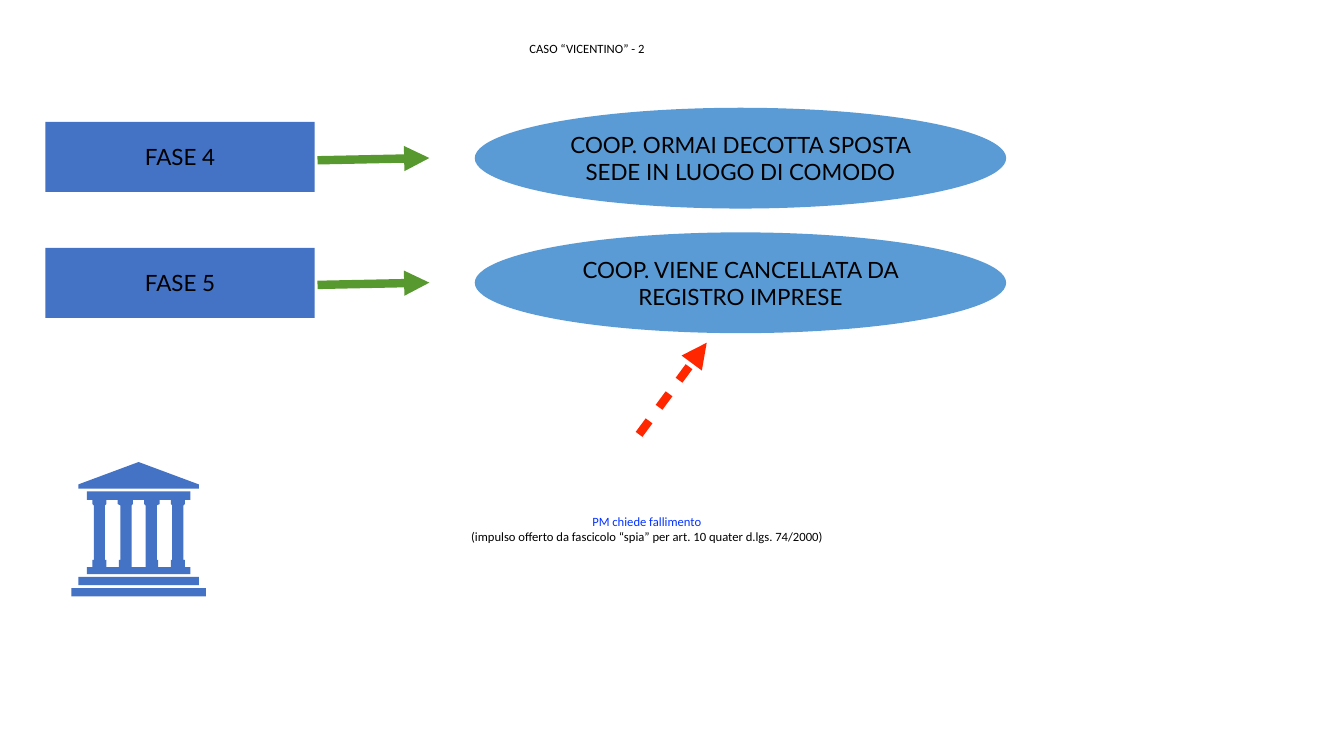
"""Build the slide on phases 4 and 5 of the case."""
import pptx
import pptx.dml.color
import pptx.enum.shapes
import pptx.enum.text
import pptx.oxml
import pptx.oxml.ns
import pptx.util

Pt = pptx.util.Pt
RGBColor = pptx.dml.color.RGBColor
MSO_SHAPE = pptx.enum.shapes.MSO_SHAPE
MSO_AUTO_SIZE = pptx.enum.text.MSO_AUTO_SIZE
PP_ALIGN = pptx.enum.text.PP_ALIGN

BLACK = RGBColor(0x00, 0x00, 0x00)
BLUE = RGBColor(0x44, 0x72, 0xC4)
SKY = RGBColor(0x5B, 0x9B, 0xD5)
GREEN = RGBColor(0x57, 0x98, 0x2F)
RED = RGBColor(0xFF, 0x26, 0x00)
LINK_BLUE = RGBColor(0x04, 0x33, 0xFF)


def write(sp, *lines, font="Calibri", size=9, colors=(BLACK,), align=PP_ALIGN.CENTER,
          wrap=True, auto_size=MSO_AUTO_SIZE.NONE):
    tf = sp.text_frame
    tf.word_wrap = wrap
    tf.auto_size = auto_size
    tf.vertical_anchor = pptx.enum.text.MSO_ANCHOR.MIDDLE
    tf.margin_left = tf.margin_right = tf.margin_top = tf.margin_bottom = Pt(2.4)
    for i, text in enumerate(lines):
        p = tf.add_paragraph() if i else tf.paragraphs[0]
        p.alignment = align
        p.line_spacing = 1.0
        r = p.add_run()
        r.text = text
        r.font.name = font
        r.font.size = Pt(size)
        r.font.color.rgb = colors[i % len(colors)]


def mirror(center, profile):
    right = [(center + dx, y) for dx, y in profile]
    left = [(center - dx, y) for dx, y in reversed(profile)]
    return right + left


class Deck:
    """Hold the slide and its shared style."""

    def __init__(self, prs):
        self.slide = prs.slides.add_slide(prs.slide_layouts[5])
        self.shapes = self.slide.shapes

    def title(self, text, x, y, w, h):
        sp = self.shapes.title
        sp.left, sp.top, sp.width, sp.height = Pt(x), Pt(y), Pt(w), Pt(h)
        write(sp, text, align=PP_ALIGN.LEFT, auto_size=MSO_AUTO_SIZE.SHAPE_TO_FIT_TEXT)

    def paint(self, sp, fill):
        sp.shadow.inherit = False
        sp.fill.solid()
        sp.fill.fore_color.rgb = fill
        sp.line.fill.background()

    def box(self, kind, text, x, y, w, h, fill):
        sp = self.shapes.add_shape(kind, Pt(x), Pt(y), Pt(w), Pt(h))
        self.paint(sp, fill)
        write(sp, text, font="Lato", size=16)

    def note(self, lines, x, y, w, h, colors):
        sp = self.shapes.add_textbox(Pt(x), Pt(y), Pt(w), Pt(h))
        write(sp, *lines, colors=colors, wrap=False,
              auto_size=MSO_AUTO_SIZE.SHAPE_TO_FIT_TEXT)

    def arrow(self, x1, y1, x2, y2, color, dashed=False):
        cx = self.shapes.add_connector(pptx.enum.shapes.MSO_CONNECTOR.STRAIGHT,
                                       Pt(x1), Pt(y1), Pt(x2), Pt(y2))
        cx.line.color.rgb = color
        cx.line.width = Pt(6)
        ln = cx.line._get_or_add_ln()
        if dashed:
            dash = pptx.oxml.parse_xml(
                f'<a:custDash {pptx.oxml.ns.nsdecls("a")}>'
                '<a:ds d="200000" sp="200000"/></a:custDash>')
            ln.append(dash)
        ln.append(pptx.oxml.parse_xml(
            f'<a:tailEnd {pptx.oxml.ns.nsdecls("a")} type="triangle"/>'))
        cx._element.spPr.append(pptx.oxml.parse_xml(
            f'<a:effectLst {pptx.oxml.ns.nsdecls("a")}/>'))

    def outline(self, contours, fill):
        first, *others = contours
        fb = self.shapes.build_freeform(*first[0], scale=Pt(1))
        fb.add_line_segments(first[1:], close=True)
        for points in others:
            fb.move_to(*points[0])
            fb.add_line_segments(points[1:], close=True)
        self.paint(fb.convert_to_shape(), fill)

    def courthouse(self, center, pitch):
        roof = [(0, 330.5), (42.8, 346.3), (42.8, 349.2)]
        colonnade = [(37.1, 350.6), (37.1, 357.1), (33.5, 357.1), (33.5, 360),
                     (32, 361.4), (32, 399.6), (32.8, 399.6), (32.8, 404.6),
                     (37.1, 404.6), (37.1, 410.4)]
        gap = [(4, 357.1), (4, 360), (5.4, 361.4), (5.4, 399.6),
               (4.7, 399.6), (4.7, 404.6)]
        steps = [[(42.8, 411.8), (42.8, 418)], [(47.9, 419.6), (47.9, 425.6)]]
        contours = [mirror(center, part) for part in (roof, colonnade, *steps)]
        contours += [mirror(center + i * pitch, gap)[::-1] for i in (-1, 0, 1)]
        self.outline(contours, BLUE)


def main():
    prs = pptx.Presentation()
    prs.slide_width, prs.slide_height = Pt(960), Pt(540)
    s = Deck(prs)
    s.title("CASO “VICENTINO” - 2", 375.8, 26.8, 270.7, 15.4)
    phases = [("FASE 4", "COOP. ORMAI DECOTTA SPOSTA SEDE IN LUOGO DI COMODO"),
              ("FASE 5", "COOP. VIENE CANCELLATA DA REGISTRO IMPRESE")]
    for i, (phase, event) in enumerate(phases):
        s.box(MSO_SHAPE.RECTANGLE, phase, 32.4, 87.1 + 90 * i, 192.4, 50, BLUE)
        dy = 89 * i
        s.arrow(226.8, 114.5 + dy, 306.7, 112.9 + dy, GREEN)
        s.box(MSO_SHAPE.OVAL, event, 339.1, 77 + dy, 379.6, 72, SKY)
    s.courthouse(99, 18.72)
    s.note(["PM chiede fallimento",
            "(impulso offerto da fascicolo “spia” per art. 10 quater d.lgs. 74/2000)"],
           333, 365, 257.8, 26, (LINK_BLUE, BLACK))
    s.arrow(456.5, 310.3, 504.8, 244.8, RED, dashed=True)
    prs.save("out.pptx")


if __name__ == "__main__":
    main()
